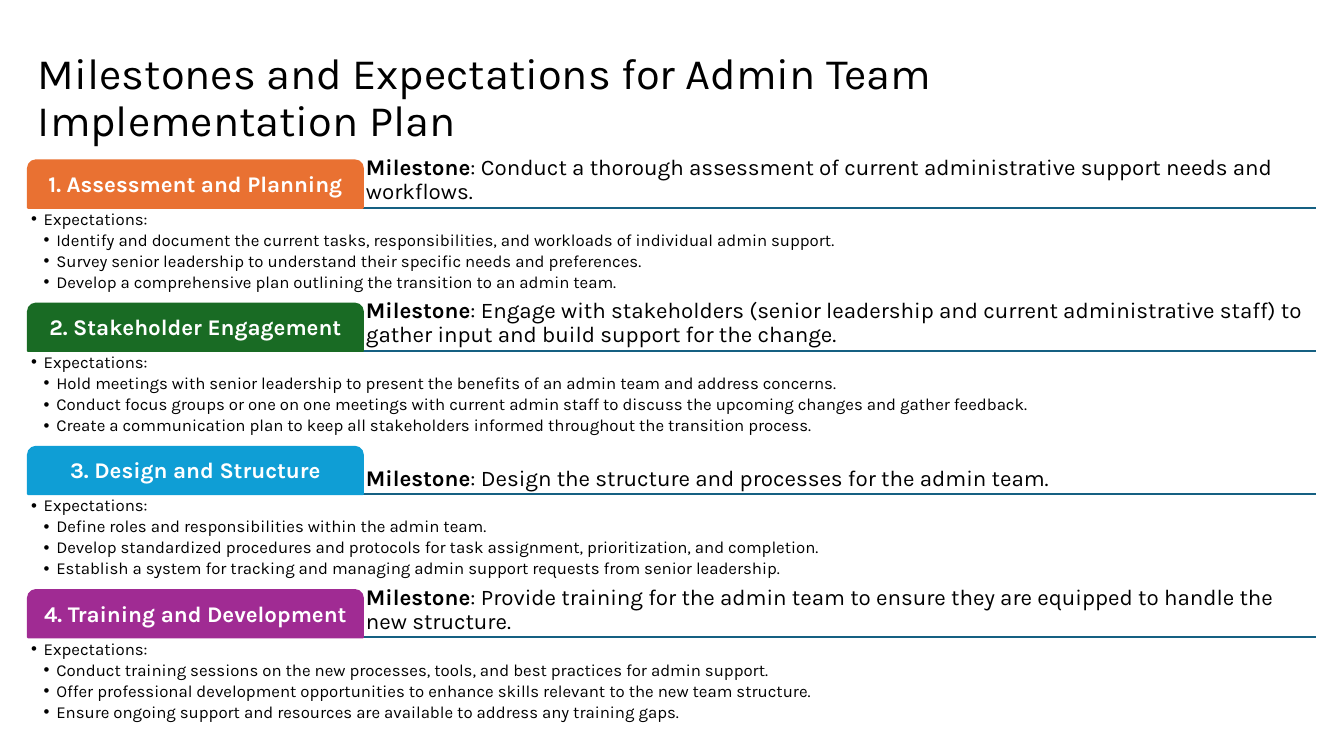
from lxml import etree
from pptx import Presentation
from pptx.dml.color import RGBColor
from pptx.enum import shapes, text
from pptx.oxml.ns import qn
from pptx.util import Pt

TITLE = "Milestones and Expectations for Admin Team Implementation Plan"
PHASES = [
    ("1. Assessment and Planning", "orange",
     "Conduct a thorough assessment of current administrative support needs and workflows.",
     ["Identify and document the current tasks, responsibilities, and workloads of individual admin support.",
      "Survey senior leadership to understand their specific needs and preferences.",
      "Develop a comprehensive plan outlining the transition to an admin team."]),
    ("2. Stakeholder Engagement", "green",
     "Engage with stakeholders (senior leadership and current administrative staff) to "
     "gather input and build support for the change.",
     ["Hold meetings with senior leadership to present the benefits of an admin team and address concerns.",
      "Conduct focus groups or one on one meetings with current admin staff to discuss "
      "the upcoming changes and gather feedback.",
      "Create a communication plan to keep all stakeholders informed throughout the transition process."]),
    ("3. Design and Structure", "blue",
     "Design the structure and processes for the admin team.",
     ["Define roles and responsibilities within the admin team.",
      "Develop standardized procedures and protocols for task assignment, prioritization, and completion.",
      "Establish a system for tracking and managing admin support requests from senior leadership."]),
    ("4. Training and Development", "purple",
     "Provide training for the admin team to ensure they are equipped to handle the new structure.",
     ["Conduct training sessions on the new processes, tools, and best practices for admin support.",
      "Offer professional development opportunities to enhance skills relevant to the new team structure.",
      "Ensure ongoing support and resources are available to address any training gaps."]),
]
COLORS = {"black": "000000", "white": "FFFFFF", "rule": "156082", "orange": "E97132",
          "green": "196B24", "blue": "0F9ED5", "purple": "A02B93"}
FONT = "Karla"
LEFT, WIDTH, TAB_WIDTH = 20, 920.3, 239.2
FIRST_TOP, PITCH, HEAD_HEIGHT, BODY_HEIGHT = 114.6, 102.3, 33.8, 67
INSET, INDENT, LINE_WEIGHT = 2.2, 9, 1.5


def rgb(name):
    """Return the named colour."""
    return RGBColor.from_string(COLORS[name])


def add_bullet(paragraph, level):
    """Give the paragraph a hanging bullet at the level."""
    paragraph.level = level
    properties = paragraph._p.get_or_add_pPr()
    properties.set("marL", str(Pt(INDENT * (level + 1))))
    properties.set("indent", str(-Pt(INDENT)))
    etree.SubElement(properties, qn("a:buFont")).set("typeface", "Arial")
    etree.SubElement(properties, qn("a:buChar")).set("char", "•")


def write(frame, paragraphs, size=12, color="black", align="LEFT", anchor="TOP",
          inset=INSET, after=0, bulleted=False):
    """Fill a text frame with paragraphs of (words, bold) runs."""
    frame.word_wrap = True
    frame.vertical_anchor = text.MSO_ANCHOR[anchor]
    frame.margin_left = frame.margin_right = Pt(inset)
    frame.margin_top = frame.margin_bottom = Pt(min(inset, 3.6))
    for index, runs in enumerate(paragraphs):
        paragraph = frame.add_paragraph() if index else frame.paragraphs[0]
        paragraph.alignment = text.PP_ALIGN[align]
        paragraph.line_spacing = 0.9
        paragraph.space_after = Pt(after)
        if bulleted:
            add_bullet(paragraph, min(index, 1))
        for words, bold in runs:
            run = paragraph.add_run()
            run.text = words
            run.font.name = FONT
            run.font.size = Pt(size)
            run.font.bold = bold
            run.font.color.rgb = rgb(color)


def add_words(slide, left, top, width, height, paragraphs, **style):
    """Place a text box and write in it."""
    box = slide.shapes.add_textbox(Pt(left), Pt(top), Pt(width), Pt(height))
    write(box.text_frame, paragraphs, **style)


def add_phase(slide, top, name, color, milestone, expectations):
    """Draw one phase: rule, milestone, tab and expectations."""
    base = top + HEAD_HEIGHT
    rule = slide.shapes.add_connector(
        shapes.MSO_CONNECTOR.STRAIGHT, Pt(LEFT), Pt(base), Pt(LEFT + WIDTH), Pt(base))
    rule.line.color.rgb = rgb("rule")
    rule.line.width = Pt(LINE_WEIGHT)
    etree.SubElement(rule._element.spPr, qn("a:effectLst"))

    add_words(slide, LEFT + TAB_WIDTH, top, WIDTH - TAB_WIDTH, HEAD_HEIGHT,
              [[("Milestone", True), (": " + milestone, False)]], size=16, anchor="BOTTOM")

    tab = slide.shapes.add_shape(shapes.MSO_SHAPE.ROUND_2_SAME_RECTANGLE,
                                 Pt(LEFT), Pt(top), Pt(TAB_WIDTH), Pt(HEAD_HEIGHT))
    tab.adjustments[0], tab.adjustments[1] = 0.17, 0
    tab.shadow.inherit = False
    tab.fill.solid()
    tab.fill.fore_color.rgb = rgb(color)
    tab.line.color.rgb = rgb(color)
    tab.line.width = Pt(LINE_WEIGHT)
    write(tab.text_frame, [[(name, True)]], size=16, color="white", align="CENTER",
          anchor="MIDDLE")

    lines = [[(words, False)] for words in ["Expectations:", *expectations]]
    add_words(slide, LEFT, base, WIDTH, BODY_HEIGHT, lines, after=2.1, bulleted=True)


def main():
    """Build the milestones slide."""
    deck = Presentation()
    deck.slide_width, deck.slide_height = Pt(960), Pt(540)
    slide = deck.slides.add_slide(deck.slide_layouts[6])
    add_words(slide, LEFT, 36.7, 865.4, 68.4, [[(TITLE, False)]], size=31,
              anchor="MIDDLE", inset=7.2)
    for index, phase in enumerate(PHASES):
        add_phase(slide, FIRST_TOP + index * PITCH, *phase)
    deck.save("out.pptx")


if __name__ == "__main__":
    main()
